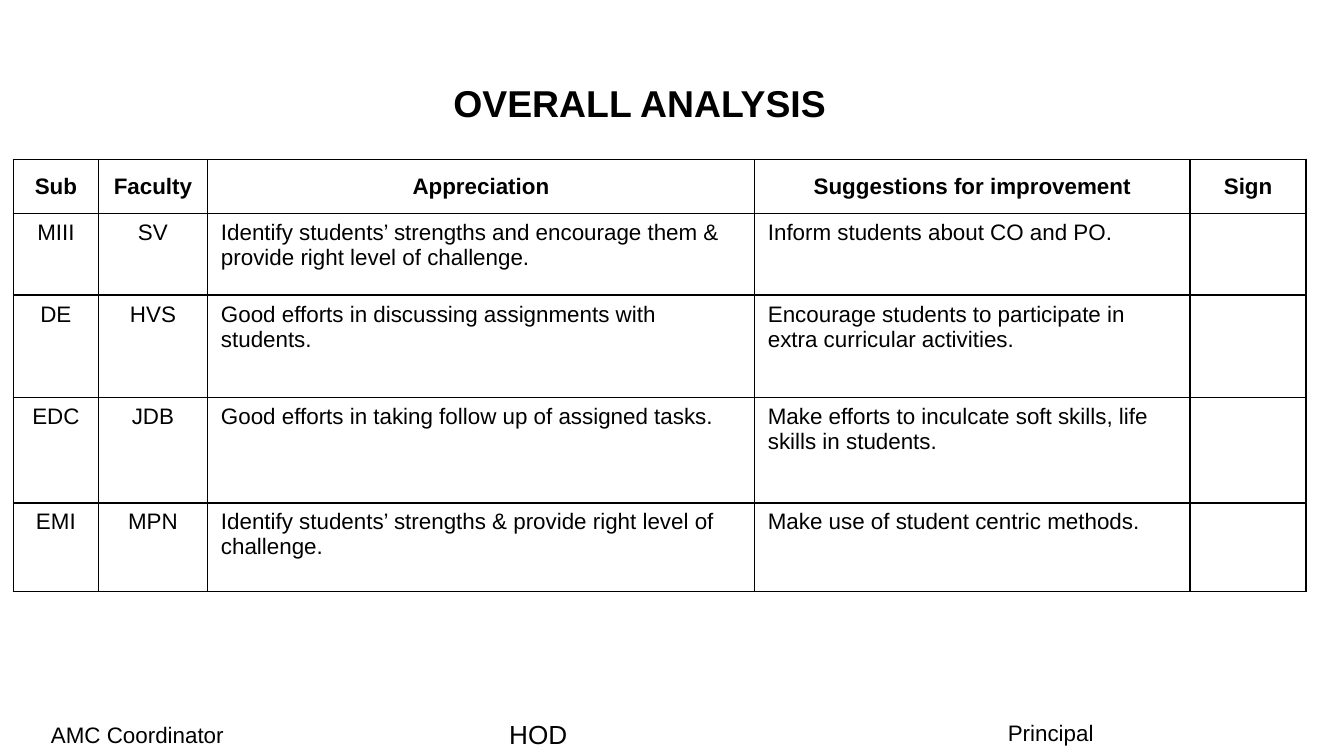
from lxml.etree import SubElement
from pptx import Presentation
from pptx.dml.color import RGBColor
from pptx.enum.text import MSO_ANCHOR, MSO_AUTO_SIZE, PP_ALIGN
from pptx.oxml.ns import qn
from pptx.util import Pt

COLORS = {"text": "000000", "border": "000000", "background": "FFFFFF"}
FONT = "Arial"

COLUMN_WIDTHS = [45.5, 58.5, 293, 233.5, 62]
ROW_HEIGHTS = [28.8, 43.9, 54.9, 56.3, 47.5]
CENTERED_COLUMNS = 2
HEADERS = ["Sub", "Faculty", "Appreciation", "Suggestions for improvement", "Sign"]
REVIEWS = [
    ["MIII", "SV",
     "Identify students’ strengths and encourage them & provide right level of challenge.",
     "Inform students about CO and PO.", ""],
    ["DE", "HVS", "Good efforts in discussing assignments with students.",
     "Encourage students to participate in extra curricular activities.", ""],
    ["EDC", "JDB", "Good efforts in taking follow up of assigned tasks.",
     "Make efforts to inculcate soft skills, life skills in students.", ""],
    ["EMI", "MPN", "Identify students’ strengths & provide right level of challenge.",
     "Make use of student centric methods.", ""],
]

# Signatories: text, left, top, width, height, font size
SIGNATORIES = [
    ("AMC Coordinator", 20.2, 383, 139, 21.6, 12),
    ("HOD", 265.7, 381.6, 90, 24.5, 14),
    ("Principal", 532.8, 381.6, 118, 21.6, 12),
]


def write_text(frame, text, size=12, bold=False, align=PP_ALIGN.LEFT):
    para = frame.paragraphs[0]
    para.alignment = align
    span = para.add_run()
    span.text = text
    span.font.name = FONT
    span.font.size = Pt(size)
    span.font.bold = bold
    span.font.color.rgb = RGBColor.from_string(COLORS["text"])


def add_title(page, text):
    title = page.shapes.title
    title.left, title.top, title.width, title.height = Pt(7.2), Pt(33), Pt(671), Pt(29)
    frame = title.text_frame
    frame.auto_size = MSO_AUTO_SIZE.NONE
    frame.vertical_anchor = MSO_ANCHOR.TOP
    frame.margin_left = frame.margin_right = frame.margin_bottom = Pt(7.2)
    frame.margin_top = Pt(10)
    write_text(frame, text, size=20, bold=True, align=PP_ALIGN.CENTER)


def set_borders(cell, width=1):
    properties = cell._tc.get_or_add_tcPr()
    for side in ("lnL", "lnR", "lnT", "lnB"):
        line = SubElement(properties, qn(f"a:{side}"), w=str(Pt(width)))
        fill = SubElement(line, qn("a:solidFill"))
        SubElement(fill, qn("a:srgbClr"), val=COLORS["border"])


def add_review_table(page):
    rows = [HEADERS] + REVIEWS
    table = page.shapes.add_table(
        len(rows), len(HEADERS), Pt(7.2), Pt(85.5),
        Pt(sum(COLUMN_WIDTHS)), Pt(sum(ROW_HEIGHTS))).table
    table.first_row = table.horz_banding = False
    for column, width in zip(table.columns, COLUMN_WIDTHS):
        column.width = Pt(width)
    for row, height in zip(table.rows, ROW_HEIGHTS):
        row.height = Pt(height)

    for row_index, texts in enumerate(rows):
        is_header = row_index == 0
        for column_index, text in enumerate(texts):
            cell = table.cell(row_index, column_index)
            set_borders(cell)
            cell.fill.background()
            cell.vertical_anchor = MSO_ANCHOR.MIDDLE if is_header else MSO_ANCHOR.TOP
            if text:
                centered = is_header or column_index < CENTERED_COLUMNS
                write_text(cell.text_frame, text, bold=is_header,
                           align=PP_ALIGN.CENTER if centered else PP_ALIGN.LEFT)


def add_label(page, text, left, top, width, height, size):
    box = page.shapes.add_textbox(Pt(left), Pt(top), Pt(width), Pt(height))
    box.text_frame.word_wrap = True
    box.text_frame.auto_size = MSO_AUTO_SIZE.SHAPE_TO_FIT_TEXT
    write_text(box.text_frame, text, size=size)


def main():
    deck = Presentation()
    deck.slide_width, deck.slide_height = Pt(720), Pt(405)
    page = deck.slides.add_slide(deck.slide_layouts.get_by_name("Title Only"))
    page.background.fill.solid()
    page.background.fill.fore_color.rgb = RGBColor.from_string(COLORS["background"])

    add_title(page, "OVERALL ANALYSIS")
    add_review_table(page)
    for signatory in SIGNATORIES:
        add_label(page, *signatory)

    deck.save("out.pptx")


if __name__ == "__main__":
    main()
